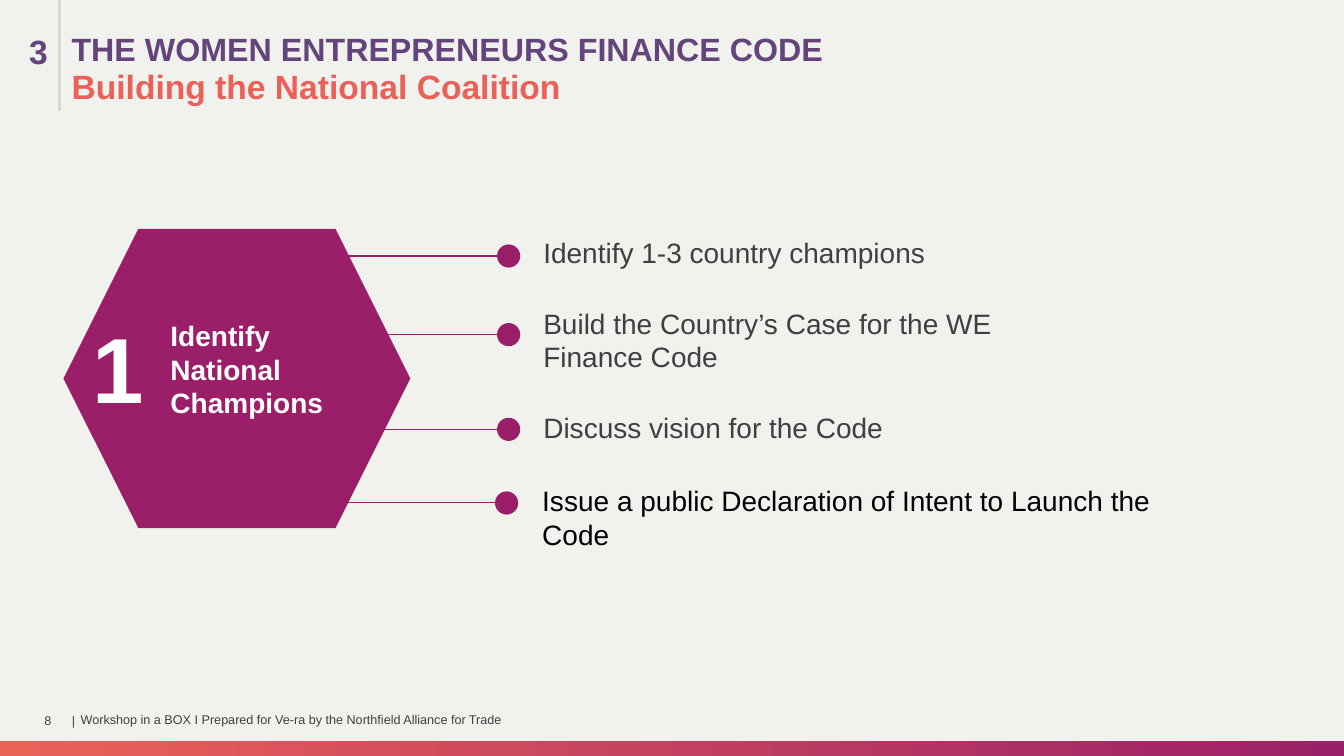
from lxml import etree
from pptx import Presentation
from pptx.dml.color import RGBColor
from pptx.enum.shapes import MSO_CONNECTOR, MSO_SHAPE
from pptx.enum.text import MSO_ANCHOR, PP_ALIGN
from pptx.oxml.ns import qn
from pptx.util import Inches, Pt

STRAIGHT = MSO_CONNECTOR.STRAIGHT
RECTANGLE, HEXAGON, OVAL = MSO_SHAPE.RECTANGLE, MSO_SHAPE.HEXAGON, MSO_SHAPE.OVAL
TOP, MIDDLE = MSO_ANCHOR.TOP, MSO_ANCHOR.MIDDLE
LEFT, CENTER = PP_ALIGN.LEFT, PP_ALIGN.CENTER

BACKGROUND = RGBColor(0xF1, 0xF1, 0xEE)
MAGENTA = RGBColor(0x9B, 0x1F, 0x68)
CORAL = RGBColor(0xEA, 0x61, 0x59)
BAR_START = RGBColor(0xEB, 0x62, 0x58)
BAR_END = RGBColor(0x9B, 0x20, 0x68)
PURPLE = RGBColor(0x64, 0x45, 0x7B)
DARK_GRAY = RGBColor(0x3F, 0x3F, 0x3F)
LIGHT_GRAY = RGBColor(0xD8, 0xD8, 0xD8)
WHITE = RGBColor(0xFF, 0xFF, 0xFF)
BLACK = RGBColor(0x00, 0x00, 0x00)

prs = Presentation()
prs.slide_width, prs.slide_height = Inches(13.33), Inches(7.5)
slide = prs.slides.add_slide(prs.slide_layouts[6])
slide.background.fill.solid()
slide.background.fill.fore_color.rgb = BACKGROUND


def add_text(text, box, size, color, bold=False, indent=0, inset=(0.1, 0.05),
             anchor=TOP, align=LEFT):
    frame = slide.shapes.add_textbox(*map(Inches, box)).text_frame
    frame.word_wrap = True
    frame.vertical_anchor = anchor
    frame.margin_left = Inches(inset[0] + indent)
    frame.margin_right = Inches(inset[0])
    frame.margin_top = frame.margin_bottom = Inches(inset[1])
    frame.text = text
    for paragraph in frame.paragraphs:
        paragraph.alignment = align
        font = paragraph.runs[0].font
        font.name, font.size, font.bold = "Arial", Pt(size), bold
        font.color.rgb = color


def add_line(x1, y1, x2, y2, color, width):
    line = slide.shapes.add_connector(STRAIGHT, *map(Inches, (x1, y1, x2, y2)))
    line.line.color.rgb = color
    line.line.width = Pt(width)
    etree.SubElement(line._element.spPr, qn("a:effectLst"))


# Gradient bar along the bottom edge
bar = slide.shapes.add_shape(RECTANGLE, 0, Inches(7.35), prs.slide_width, Inches(0.15))
bar.shadow.inherit = False
bar.line.fill.background()
bar.fill.gradient()
bar.fill.gradient_angle = 0
for stop, color in zip(bar.fill.gradient_stops, (BAR_START, BAR_END)):
    stop.color.rgb = color

# Section number, title and subtitle
add_text("3", (0, 0.26, 0.9, 0.5), 24, PURPLE, bold=True, indent=0.19)
add_text("THE WOMEN ENTREPRENEURS FINANCE CODE", (0.42, 0.24, 12.19, 0.5), 23,
         PURPLE, bold=True, indent=0.19)
add_text("Building the National Coalition", (0.59, 0.6, 11.13, 0.5), 24,
         CORAL, bold=True, indent=0.02)
add_line(0.59, 0, 0.59, 1.1, LIGHT_GRAY, 2.25)

# Step hexagon
hexagon = slide.shapes.add_shape(HEXAGON, Inches(0.63), Inches(2.27), Inches(3.44), Inches(2.97))
hexagon.adjustments[0] = 0.25
hexagon.shadow.inherit = False
hexagon.fill.solid()
hexagon.fill.fore_color.rgb = MAGENTA
hexagon.line.fill.background()
add_text("1", (0.82, 3.04, 0.7, 1.42), 66, WHITE, bold=True)
add_text("Identify\nNational\nChampions", (0.9, 3.11, 3.15, 1.11), 20, WHITE,
         bold=True, indent=0.69)

# Actions: line height, dot left, text, text box, colour
DOT = 0.23
actions = [
    (2.54, 4.93, "Identify 1-3 country champions", (5.29, 2.29, 4.67, 0.5), DARK_GRAY),
    (3.32, 4.93, "Build the Country’s Case for the WE Finance Code",
     (5.29, 2.99, 4.67, 0.78), DARK_GRAY),
    (4.26, 4.93, "Discuss vision for the Code", (5.29, 4.02, 6.66, 0.44), DARK_GRAY),
    (4.99, 4.91, "Issue a public Declaration of Intent to Launch the Code",
     (5.28, 4.75, 6.66, 0.77), BLACK),
]
for y, dot_left, action, box, color in actions:
    add_line(3.1, y, 5.05, y, MAGENTA, 0.75)
    dot = slide.shapes.add_shape(OVAL, Inches(dot_left), Inches(y - DOT / 2),
                                 Inches(DOT), Inches(DOT))
    dot.shadow.inherit = False
    dot.fill.solid()
    dot.fill.fore_color.rgb = MAGENTA
    dot.line.fill.background()
    add_text(action, box, 20, color)

# Footer
footer = [
    ("8", (0.44, 6.95, 0.22, 0.4), LEFT),
    ("|", (0.68, 6.95, 0.1, 0.4), CENTER),
    ("Workshop in a BOX I Prepared for Ve-ra by the Northfield Alliance for Trade",
     (0.8, 6.94, 5.71, 0.4), LEFT),
]
for text, box, align in footer:
    add_text(text, box, 9, DARK_GRAY, inset=(0, 0), anchor=MIDDLE, align=align)

prs.save("out.pptx")
